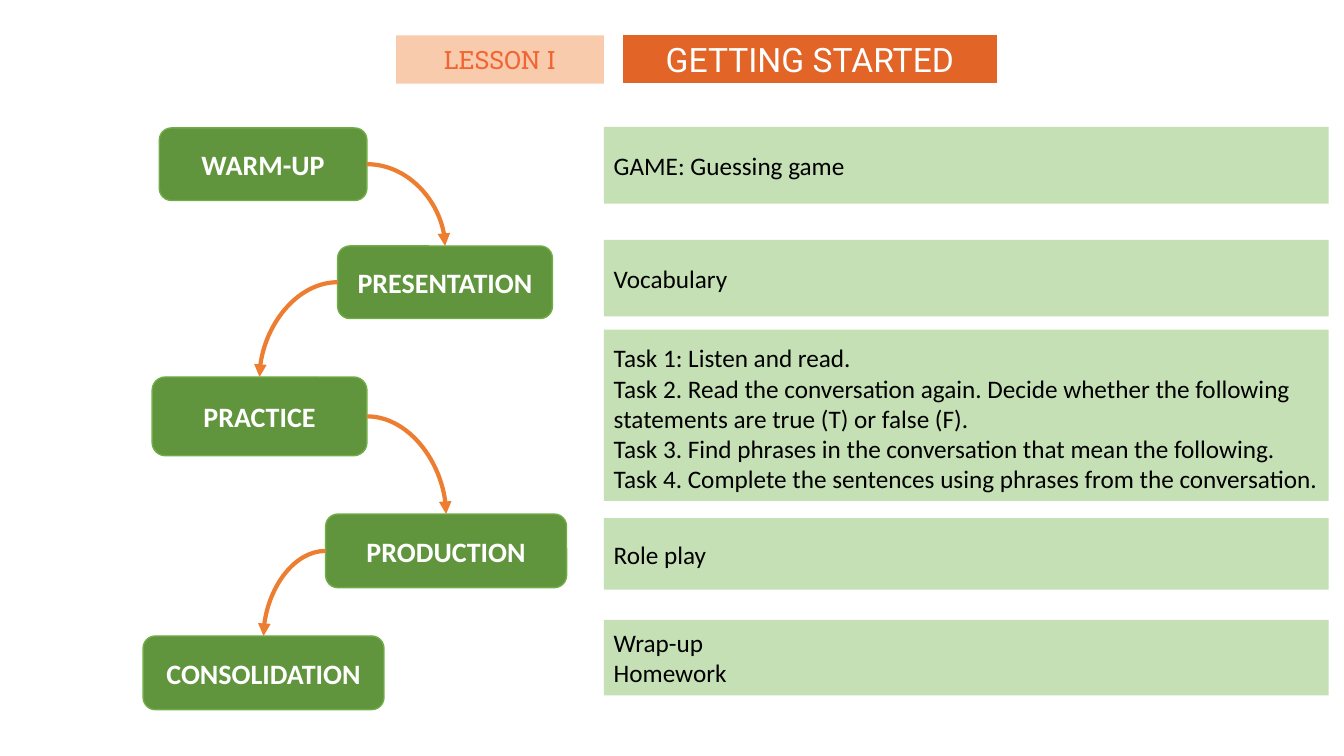
from dataclasses import dataclass
from itertools import pairwise

from lxml import etree
from pptx import Presentation
from pptx.dml.color import RGBColor
from pptx.enum.shapes import MSO_CONNECTOR, MSO_SHAPE
from pptx.enum.text import MSO_ANCHOR, PP_ALIGN
from pptx.oxml.ns import qn
from pptx.shapes.autoshape import Shape
from pptx.slide import Slide
from pptx.util import Pt

RECTANGLE = MSO_SHAPE.RECTANGLE
ROUNDED = MSO_SHAPE.ROUNDED_RECTANGLE
CURVE = MSO_CONNECTOR.CURVE
LEFT, CENTER = PP_ALIGN.LEFT, PP_ALIGN.CENTER
MIDDLE = MSO_ANCHOR.MIDDLE
TOP_SITE, LEFT_SITE, RIGHT_SITE = 0, 1, 3  # connection sites of a rectangle


@dataclass(frozen=True)
class Theme:
    white: str = "FFFFFF"
    black: str = "000000"
    stage_fill: str = "61953D"
    stage_line: str = "70AD47"
    panel_fill: str = "C5E0B4"
    arrow: str = "ED7D31"
    title_fill: str = "E36427"
    lesson_fill: str = "F8CBAD"
    lesson_text: str = "F26532"
    body_font: str = "Calibri"
    title_font: str = "Roboto"
    lesson_font: str = "Roboto Slab"
    title_size: float = 24
    stage_size: float = 20
    body_size: float = 18
    arrow_width: float = 3


THEME = Theme()


@dataclass(frozen=True)
class Box:
    left: float
    top: float
    width: float
    height: float


@dataclass(frozen=True)
class Style:
    fill: str
    color: str
    font: str
    size: float
    bold: bool = False
    line: str | None = None
    line_width: float = 1
    geometry: MSO_SHAPE = RECTANGLE
    alignment: PP_ALIGN = CENTER


@dataclass(frozen=True)
class Stage:
    name: str
    box: Box
    panel_top: float
    panel_height: float
    activities: tuple[str, ...]
    first_line_spacing: float = 1.0


STAGE_STYLE = Style(THEME.stage_fill, THEME.white, THEME.body_font, THEME.stage_size,
                    bold=True, line=THEME.stage_line, geometry=ROUNDED)
PANEL_STYLE = Style(THEME.panel_fill, THEME.black, THEME.body_font, THEME.body_size,
                    alignment=LEFT)
TITLE_STYLE = Style(THEME.title_fill, THEME.white, THEME.title_font, THEME.title_size,
                    line=THEME.white, line_width=1.5)
LESSON_STYLE = Style(THEME.lesson_fill, THEME.lesson_text, THEME.lesson_font, THEME.body_size)

PANEL_LEFT, PANEL_WIDTH = 431.3, 517.7

STAGES = (
    Stage("WARM-UP", Box(113.8, 91.4, 148.3, 51.8), 90.7, 54.7,
          ("GAME: Guessing game",)),
    Stage("PRESENTATION", Box(241.2, 175.7, 153.4, 51.8), 171.4, 54.7,
          ("Vocabulary",)),
    Stage("PRACTICE", Box(108.7, 269.3, 153.4, 56.2), 235.4, 122.4,
          ("Task 1: Listen and read.",
           "Task 2. Read the conversation again. Decide whether the following "
           "statements are true (T) or false (F).",
           "Task 3. Find phrases in the conversation that mean the following.",
           "Task 4. Complete the sentences using phrases from the conversation."),
          first_line_spacing=1.2),
    Stage("PRODUCTION", Box(232.6, 367.2, 172.1, 52.6), 370.1, 51.1,
          ("Role play",)),
    Stage("CONSOLIDATION", Box(102.2, 454.3, 172.1, 52.6), 442.8, 54,
          ("Wrap-up", "Homework")),
)


def add_box(slide: Slide, box: Box, style: Style, lines: tuple[str, ...]) -> Shape:
    shape = slide.shapes.add_shape(style.geometry, Pt(box.left), Pt(box.top),
                                   Pt(box.width), Pt(box.height))
    shape.shadow.inherit = False
    shape.fill.solid()
    shape.fill.fore_color.rgb = RGBColor.from_string(style.fill)
    if style.line:
        shape.line.color.rgb = RGBColor.from_string(style.line)
        shape.line.width = Pt(style.line_width)
    else:
        shape.line.fill.background()

    text_frame = shape.text_frame
    text_frame.word_wrap = True
    text_frame.vertical_anchor = MIDDLE
    text_frame.text = "\n".join(lines)
    font_format = {"name": style.font, "size": Pt(style.size), "bold": style.bold}
    for paragraph in text_frame.paragraphs:
        paragraph.alignment = style.alignment
        font = paragraph.runs[0].font
        font.color.rgb = RGBColor.from_string(style.color)
        for attribute, value in font_format.items():
            setattr(font, attribute, value)
    return shape


def add_arrow(slide: Slide, source: Shape, target: Shape) -> None:
    """Curve from the side of source that faces target to the top of target."""
    side = RIGHT_SITE if target.left > source.left else LEFT_SITE
    connector = slide.shapes.add_connector(CURVE, 0, 0, 0, 0)
    connector.begin_connect(source, side)
    connector.end_connect(target, TOP_SITE)
    connector.line.color.rgb = RGBColor.from_string(THEME.arrow)
    connector.line.width = Pt(THEME.arrow_width)

    properties = connector._element.spPr
    properties.find(qn("a:prstGeom")).set("prst", "curvedConnector2")
    etree.SubElement(properties.find(qn("a:ln")), qn("a:tailEnd"), type="triangle")
    etree.SubElement(properties, qn("a:effectLst"))


def main() -> None:
    presentation = Presentation()
    presentation.slide_width, presentation.slide_height = Pt(960), Pt(540)
    slide = presentation.slides.add_slide(presentation.slide_layouts[6])

    add_box(slide, Box(283, 25.2, 148.3, 34.6), LESSON_STYLE, ("LESSON I",))
    add_box(slide, Box(444.2, 24.5, 268.6, 35.3), TITLE_STYLE, ("GETTING STARTED",))

    stage_shapes = []
    for stage in STAGES:
        stage_shapes.append(add_box(slide, stage.box, STAGE_STYLE, (stage.name,)))
        panel_box = Box(PANEL_LEFT, stage.panel_top, PANEL_WIDTH, stage.panel_height)
        panel = add_box(slide, panel_box, PANEL_STYLE, stage.activities)
        panel.text_frame.paragraphs[0].line_spacing = stage.first_line_spacing
    for source, target in pairwise(stage_shapes):
        add_arrow(slide, source, target)

    presentation.save("out.pptx")


if __name__ == "__main__":
    main()
